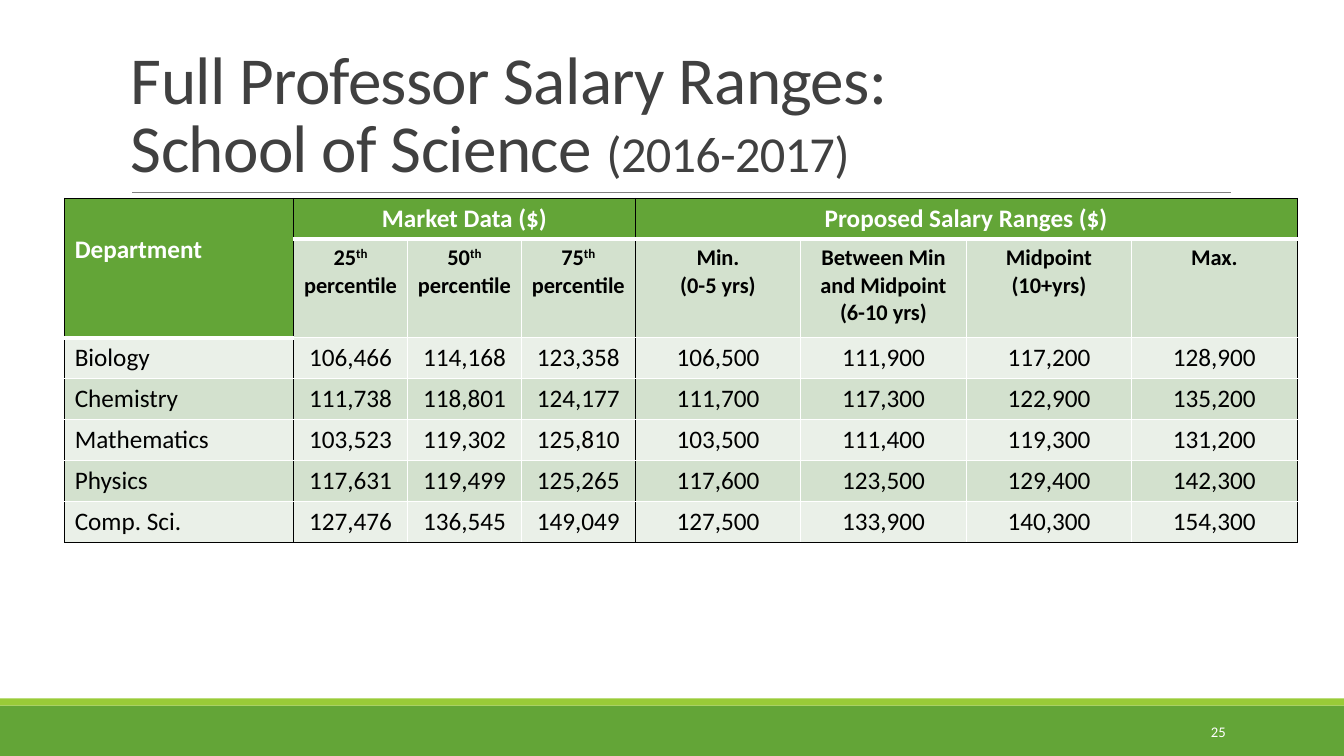
from dataclasses import dataclass

from lxml import etree
from pptx import Presentation, util as u
from pptx.dml.color import RGBColor
from pptx.enum import shapes, text
from pptx.oxml import ns


@dataclass(frozen=True)
class Theme:
    """Colours, font and type sizes of the slide."""
    font: str = "Calibri"
    green: str = "63A537"
    lime: str = "99CB38"
    band_dark: str = "D3E1CE"
    band_light: str = "EAF0E8"
    rule: str = "808080"
    heading: str = "404040"
    black: str = "000000"
    white: str = "FFFFFF"
    title_size: float = 48
    years_size: float = 36
    body_size: float = 18
    subhead_size: float = 16
    number_size: float = 10.5


@dataclass(frozen=True)
class Box:
    """A region in centimetres."""
    left: float
    top: float
    width: float
    height: float

    def lengths(self):
        """Return the four sides as lengths."""
        return [u.Cm(v) for v in (self.left, self.top, self.width, self.height)]


THEME = Theme()
COLUMN_WIDTHS = [5.77] + [2.87] * 3 + [4.17] * 4
ROW_HEIGHTS = [1.03, 2.48] + [1.03] * 5
GROUPS = [(0, 1, 0, "Department"), (1, 0, 2, "Market Data ($)"),
          (4, 0, 3, "Proposed Salary Ranges ($)")]
PERCENTILES = ["25", "50", "75"]
RANGES = [["Min.", "(0-5 yrs)"], ["Between Min and Midpoint", "(6-10 yrs)"],
          ["Midpoint", "(10+yrs)"], ["Max."]]
SALARIES = [
    ("Biology", 106466, 114168, 123358, 106500, 111900, 117200, 128900),
    ("Chemistry", 111738, 118801, 124177, 111700, 117300, 122900, 135200),
    ("Mathematics", 103523, 119302, 125810, 103500, 111400, 119300, 131200),
    ("Physics", 117631, 119499, 125265, 117600, 123500, 129400, 142300),
    ("Comp. Sci.", 127476, 136545, 149049, 127500, 133900, 140300, 154300),
]


def style(font, size, color, bold=False):
    """Set the typeface, size, colour and weight of a font."""
    font.name, font.size, font.bold = THEME.font, u.Pt(size), bold
    font.color.rgb = RGBColor.from_string(color)


def add_text_frame(slide, box, anchor):
    """Add a wrapping text box and return its frame."""
    frame = slide.shapes.add_textbox(*box.lengths()).text_frame
    frame.word_wrap, frame.vertical_anchor = True, anchor
    return frame


def add_title(slide, box):
    """Place the two-line title and the thin rule beneath it."""
    heading = add_text_frame(slide, box, text.MSO_ANCHOR.BOTTOM).paragraphs[0]
    heading.line_spacing = 0.85
    style(heading.font, THEME.title_size, THEME.heading)
    heading.add_run().text = "Full Professor Salary Ranges:"
    heading.add_line_break()
    heading.add_run().text = "School of Science "
    years = heading.add_run()
    years.text = "(2016-2017)"
    years.font.size = u.Pt(THEME.years_size)
    for run in heading.runs:
        run.font._element.set("spc", "-50")

    left, bottom = box.left + 0.28, box.top + box.height + 0.01
    rule = slide.shapes.add_connector(
        shapes.MSO_CONNECTOR.STRAIGHT, u.Cm(left), u.Cm(bottom),
        u.Cm(left + 27.69), u.Cm(bottom))
    rule.line.color.rgb = RGBColor.from_string(THEME.rule)
    rule.line.width = u.Pt(0.5)
    etree.SubElement(rule._element.spPr, ns.qn("a:effectLst"))


def add_footer(slide, box):
    """Place the lime strip, the green bar and the slide number."""
    strip = 0.18
    bands = [(Box(box.left, box.top + strip, box.width, box.height - strip), THEME.green),
             (Box(box.left, box.top, box.width, strip), THEME.lime)]
    for band_box, color in bands:
        band = slide.shapes.add_shape(shapes.MSO_SHAPE.RECTANGLE, *band_box.lengths())
        band.shadow.inherit = False
        band.fill.solid()
        band.fill.fore_color.rgb = RGBColor.from_string(color)
        band.line.fill.background()
    number_box = Box(box.left + 27.51, box.top + 0.33, 3.63, 1.02)
    number = add_text_frame(slide, number_box, text.MSO_ANCHOR.MIDDLE).paragraphs[0]
    number.text = "25"
    number.alignment = text.PP_ALIGN.RIGHT
    style(number.font, THEME.number_size, THEME.white)


def vertical_edge(boundary):
    """Return colour and width of the line at a column boundary."""
    return (THEME.black if boundary in (0, 1, 4, 8) else THEME.white), 1


def horizontal_edge(boundary, column):
    """Return colour and width of the line at a row boundary."""
    if boundary in (0, len(ROW_HEIGHTS)):
        return THEME.black, 1
    under_header = boundary == 1 or (boundary == 2 and column == 0)
    return THEME.white, 3 if under_header else 1


def paint_cell(cell, row, column, color):
    """Draw the borders and the fill of a cell, merged or single."""
    edges = {
        "a:lnL": vertical_edge(column),
        "a:lnR": vertical_edge(column + cell.span_width),
        "a:lnT": horizontal_edge(row, column),
        "a:lnB": horizontal_edge(row + cell.span_height, column),
    }
    properties = cell._tc.get_or_add_tcPr()
    for tag, (edge_color, points) in edges.items():
        edge = etree.SubElement(properties, ns.qn(tag), w=str(u.Pt(points)))
        paint = etree.SubElement(edge, ns.qn("a:solidFill"))
        etree.SubElement(paint, ns.qn("a:srgbClr"), val=edge_color)
    cell.fill.solid()
    cell.fill.fore_color.rgb = RGBColor.from_string(color)


def finish_cell(table, row, column, fill, size, color, bold=False):
    """Paint a filled-in cell and set its type."""
    cell = table.cell(row, column)
    paint_cell(cell, row, column, fill)
    for paragraph in cell.text_frame.paragraphs:
        paragraph.alignment = text.PP_ALIGN.CENTER if column else text.PP_ALIGN.LEFT
        style(paragraph.font, size, color, bold)


def add_headings(table):
    """Fill the two heading rows."""
    for column, extra_rows, extra_columns, label in GROUPS:
        cell = table.cell(0, column)
        cell.merge(table.cell(extra_rows, column + extra_columns))
        cell.text = label
        finish_cell(table, 0, column, THEME.green, THEME.body_size, THEME.white, True)
    table.cell(0, 0).margin_top = u.Cm(0.9)

    for column, rank in enumerate(PERCENTILES, 1):
        label = table.cell(1, column).text_frame.paragraphs[0]
        for part in (rank, "th", " percentile"):
            label.add_run().text = part
        label.runs[1].font._element.set("baseline", "30000")
    for column, lines in enumerate(RANGES, 4):
        table.cell(1, column).text = "\n".join(lines)
    for column in range(1, len(COLUMN_WIDTHS)):
        finish_cell(table, 1, column, THEME.band_dark, THEME.subhead_size, THEME.black, True)


def add_salary_table(slide, box):
    """Place the table of market data and proposed salary ranges."""
    table = slide.shapes.add_table(
        len(ROW_HEIGHTS), len(COLUMN_WIDTHS), *box.lengths()).table
    table.first_row = table.horz_banding = False
    for column, width in zip(table.columns, COLUMN_WIDTHS):
        column.width = u.Cm(width)
    for row, height in zip(table.rows, ROW_HEIGHTS):
        row.height = u.Cm(height)
    add_headings(table)
    for row, (department, *amounts) in enumerate(SALARIES, 2):
        fill = THEME.band_dark if row % 2 else THEME.band_light
        labels = [department] + [f"{amount:,}" for amount in amounts]
        for column, label in enumerate(labels):
            table.cell(row, column).text = label
            finish_cell(table, row, column, fill, THEME.body_size, THEME.black)


def main():
    """Build the salary slide and save it."""
    deck = Presentation()
    deck.slide_width, deck.slide_height = u.Cm(33.87), u.Cm(19.05)
    slide = deck.slides.add_slide(deck.slide_layouts[6])
    add_footer(slide, Box(0, 17.6, 33.87, 1.45))
    add_title(slide, Box(3.05, 0.79, 27.94, 4.04))
    add_salary_table(slide, Box(1.63, 5, sum(COLUMN_WIDTHS), sum(ROW_HEIGHTS)))
    deck.save("out.pptx")


if __name__ == "__main__":
    main()
